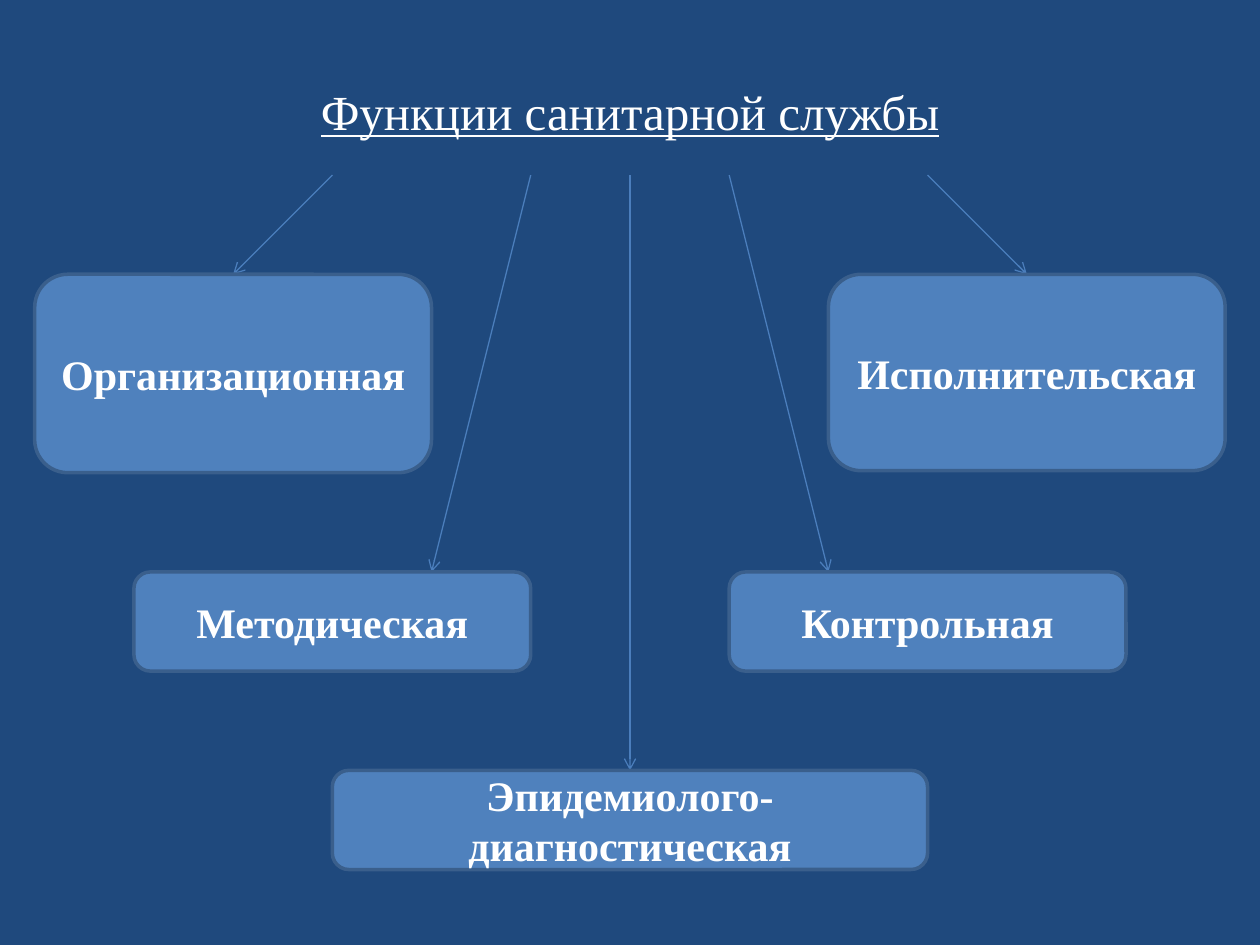
import pptx
import pptx.dml.color
import pptx.enum.shapes
import pptx.enum.text
import pptx.oxml
import pptx.oxml.ns
import pptx.util
from dataclasses import dataclass

Cm = pptx.util.Cm
Pt = pptx.util.Pt


@dataclass(frozen=True)
class Theme:
    background: str = "1F497D"
    box_fill: str = "4F81BD"
    box_line: str = "3A5F8C"
    arrow: str = "4B7EBC"
    text: str = "FFFFFF"
    font: str = "Times New Roman"
    title_size: int = 28
    box_size: int = 24
    box_line_width: float = 2
    arrow_width: float = 0.75


THEME = Theme()

# Layout in centimetres: everything sits on a 2 cm grid
STEP = 2
GRID_LEFT, GRID_TOP = 0.7, 3.53

# Label, column, row, width and height in grid steps
BOXES = [
    ("Эпидемиолого-диагностическая", 3, 6, 6, 1),
    ("Методическая", 1, 4, 4, 1),
    ("Контрольная", 7, 4, 4, 1),
    ("Организационная", 0, 1, 4, 2),
    ("Исполнительская", 8, 1, 4, 1.98),
]

# Start column, end column and end row; all arrows start in row 0
ARROWS = [(3, 2, 1), (9, 10, 1), (6, 6, 6), (5, 4, 4), (7, 8, 4)]


def color(value):
    return pptx.dml.color.RGBColor.from_string(value)


def grid_x(column):
    return Cm(GRID_LEFT + STEP * column)


def grid_y(row):
    return Cm(GRID_TOP + STEP * row)


def write_text(shape, text, size, bold=None, underline=None):
    frame = shape.text_frame
    frame.word_wrap = True
    paragraph = frame.paragraphs[0]
    paragraph.alignment = pptx.enum.text.PP_ALIGN.CENTER
    run = paragraph.add_run()
    run.text = text
    run.font.name = THEME.font
    run.font.size = Pt(size)
    run.font.bold = bold
    run.font.underline = underline
    run.font.color.rgb = color(THEME.text)


def add_title(slide, text):
    shape = slide.shapes.add_textbox(Cm(4.7), Cm(1.52), Cm(16), Cm(1.45))
    shape.text_frame.auto_size = pptx.enum.text.MSO_AUTO_SIZE.SHAPE_TO_FIT_TEXT
    write_text(shape, text, THEME.title_size, underline=True)


def add_box(slide, text, column, row, width, height):
    shape = slide.shapes.add_shape(
        pptx.enum.shapes.MSO_SHAPE.ROUNDED_RECTANGLE,
        grid_x(column), grid_y(row), Cm(STEP * width), Cm(STEP * height))
    shape.shadow.inherit = False
    shape.fill.solid()
    shape.fill.fore_color.rgb = color(THEME.box_fill)
    shape.line.color.rgb = color(THEME.box_line)
    shape.line.width = Pt(THEME.box_line_width)
    shape.text_frame.vertical_anchor = pptx.enum.text.MSO_ANCHOR.MIDDLE
    write_text(shape, text, THEME.box_size, bold=True)


def add_arrow(slide, start_column, end_column, end_row):
    connector = slide.shapes.add_connector(
        pptx.enum.shapes.MSO_CONNECTOR.STRAIGHT,
        grid_x(start_column), grid_y(0), grid_x(end_column), grid_y(end_row))
    connector.line.color.rgb = color(THEME.arrow)
    connector.line.width = Pt(THEME.arrow_width)
    # Open arrowhead at the end, no shadow
    properties = connector.line._get_or_add_ln()
    head = pptx.oxml.ns.qn("a:tailEnd")
    properties.append(properties.makeelement(head, {"type": "arrow"}))
    effects = pptx.oxml.ns.qn("a:effectLst")
    properties.getparent().append(properties.makeelement(effects, {}))


def main():
    presentation = pptx.Presentation()
    presentation.slide_width = Cm(25.4)
    presentation.slide_height = Cm(19.05)
    slide = presentation.slides.add_slide(presentation.slide_layouts[6])

    # Background
    slide.background.fill.solid()
    slide.background.fill.fore_color.rgb = color(THEME.background)

    # Title, arrows and the functions they lead to
    add_title(slide, "Функции санитарной службы")
    for arrow in ARROWS:
        add_arrow(slide, *arrow)
    for box in BOXES:
        add_box(slide, *box)

    presentation.save("out.pptx")


if __name__ == "__main__":
    main()
